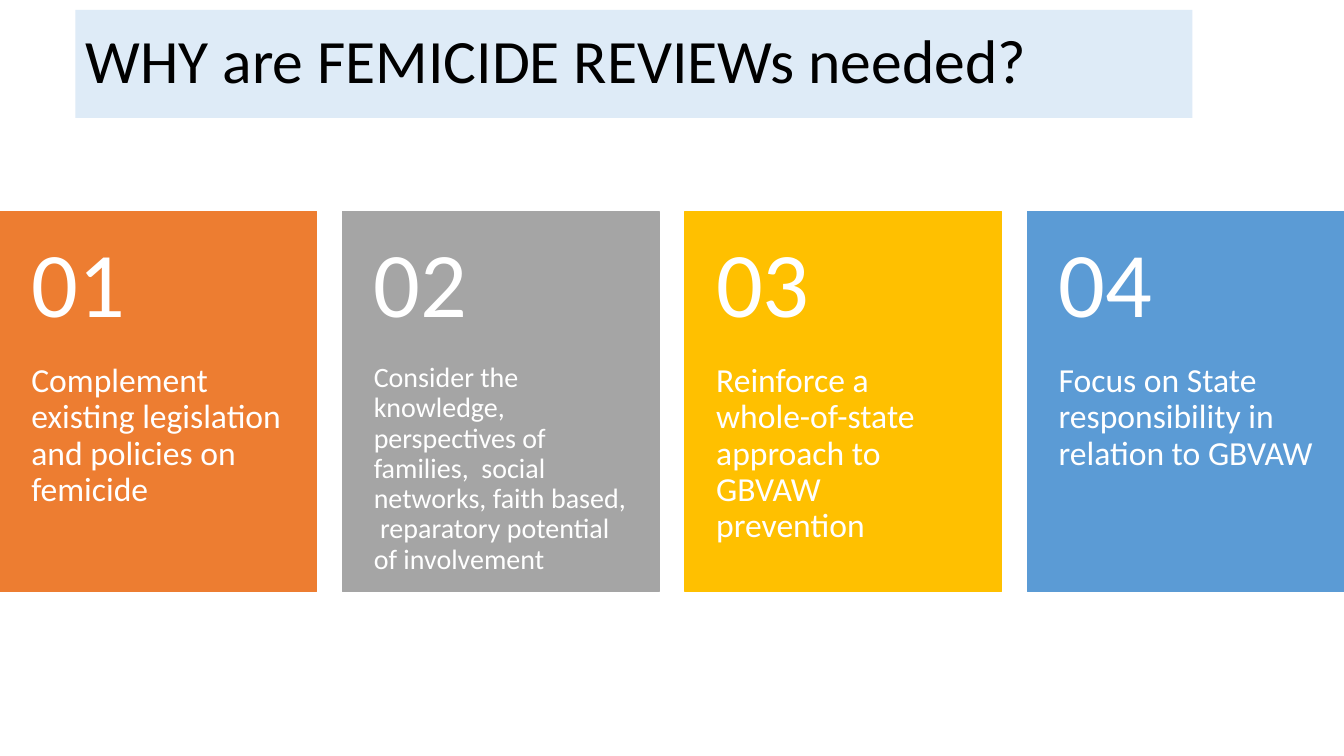
from dataclasses import dataclass

from pptx import Presentation
from pptx.dml.color import RGBColor
from pptx.enum.shapes import MSO_SHAPE
from pptx.enum.text import MSO_ANCHOR, MSO_AUTO_SIZE, PP_ALIGN
from pptx.slide import Slide
from pptx.text.text import TextFrame
from pptx.util import Cm, Pt

RECTANGLE = MSO_SHAPE.RECTANGLE
TOP, MIDDLE = MSO_ANCHOR.TOP, MSO_ANCHOR.MIDDLE
LEFT = PP_ALIGN.LEFT
NO_AUTOFIT = MSO_AUTO_SIZE.NONE

BLACK = RGBColor(0x00, 0x00, 0x00)
WHITE = RGBColor(0xFF, 0xFF, 0xFF)
PALE_BLUE = RGBColor(0xDE, 0xEB, 0xF7)
ORANGE = RGBColor(0xED, 0x7D, 0x31)
GRAY = RGBColor(0xA5, 0xA5, 0xA5)
GOLD = RGBColor(0xFF, 0xC0, 0x00)
BLUE = RGBColor(0x5B, 0x9B, 0xD5)

FONT = "Calibri"
TITLE_ONLY = 5
SLIDE_WIDTH, SLIDE_HEIGHT = Cm(33.87), Cm(19.05)
CARD_TOP, CARD_WIDTH, CARD_HEIGHT = Cm(5.33), Cm(7.98), Cm(9.58)
NUMBER_HEIGHT = Cm(3.83)
SIDE_MARGIN = Cm(0.79)


@dataclass(frozen=True)
class Reason:
    text: str
    color: RGBColor
    size: int = 24


REASONS = [
    Reason("Complement existing legislation and policies on femicide", ORANGE),
    Reason(
        "Consider the knowledge, perspectives of families,  social networks, "
        "faith based,  reparatory potential of involvement",
        GRAY,
        20,
    ),
    Reason("Reinforce a whole-of-state approach to GBVAW prevention", GOLD),
    Reason("Focus on State responsibility in relation to GBVAW", BLUE),
]


def write(frame: TextFrame, text: str, size: int, color: RGBColor, anchor: MSO_ANCHOR) -> None:
    frame.word_wrap = True
    frame.auto_size = NO_AUTOFIT
    frame.vertical_anchor = anchor
    frame.text = text
    para = frame.paragraphs[0]
    para.alignment = LEFT
    para.line_spacing = 0.9
    para.font.name = FONT
    para.font.size = Pt(size)
    para.font.color.rgb = color


def add_title(page: Slide, text: str) -> None:
    title = page.shapes.title
    title.left, title.top = Cm(1.9), Cm(0.25)
    title.width, title.height = Cm(28.15), Cm(2.72)
    title.fill.solid()
    title.fill.fore_color.rgb = PALE_BLUE
    write(title.text_frame, text, 44, BLACK, MIDDLE)


def add_card_text(page: Slide, left: int, top: int, height: int, text: str, size: int,
                  anchor: MSO_ANCHOR, margin_top: int, margin_bottom: int) -> None:
    box = page.shapes.add_textbox(left, top, CARD_WIDTH, height)
    frame = box.text_frame
    frame.margin_left = frame.margin_right = SIDE_MARGIN
    frame.margin_top, frame.margin_bottom = margin_top, margin_bottom
    write(frame, text, size, WHITE, anchor)


def add_card(page: Slide, left: int, number: int, reason: Reason) -> None:
    card = page.shapes.add_shape(RECTANGLE, left, CARD_TOP, CARD_WIDTH, CARD_HEIGHT)
    card.shadow.inherit = False
    card.fill.solid()
    card.fill.fore_color.rgb = reason.color
    card.line.color.rgb = reason.color
    card.line.width = Pt(1)
    add_card_text(page, left, CARD_TOP + NUMBER_HEIGHT, CARD_HEIGHT - NUMBER_HEIGHT,
                  reason.text, reason.size, TOP, Cm(0), Cm(0.91))
    add_card_text(page, left, CARD_TOP, NUMBER_HEIGHT,
                  f"{number:02d}", 66, MIDDLE, Cm(0.46), Cm(0.46))


def main() -> None:
    deck = Presentation()
    deck.slide_width, deck.slide_height = SLIDE_WIDTH, SLIDE_HEIGHT
    page = deck.slides.add_slide(deck.slide_layouts[TITLE_ONLY])
    add_title(page, "WHY are FEMICIDE REVIEWs needed?")
    pitch = (SLIDE_WIDTH - CARD_WIDTH) // (len(REASONS) - 1)
    for index, reason in enumerate(REASONS):
        add_card(page, index * pitch, index + 1, reason)
    deck.save("out.pptx")


if __name__ == "__main__":
    main()
